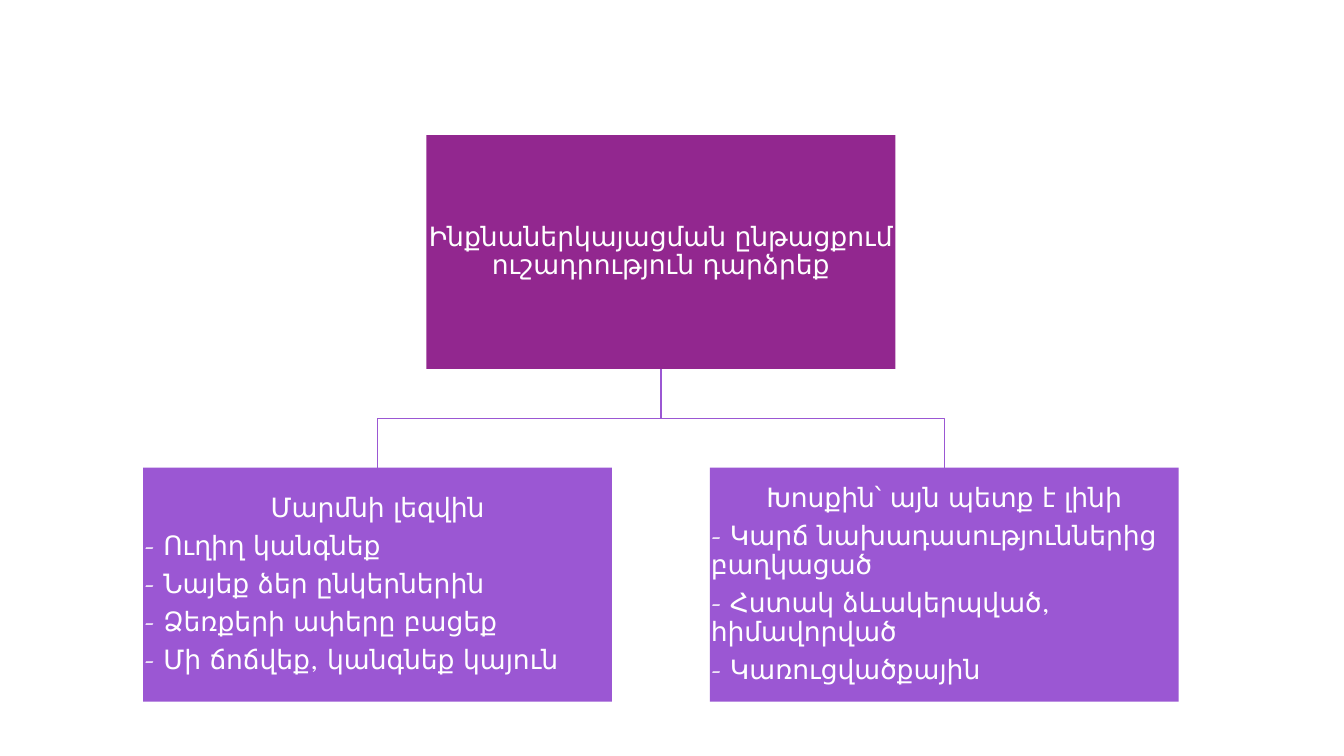
from lxml import etree
from pptx import Presentation
from pptx.dml.color import RGBColor
from pptx.enum.text import MSO_ANCHOR, MSO_AUTO_SIZE, PP_ALIGN
from pptx.oxml.ns import qn
from pptx.util import Inches, Pt

THEME = {
    "top": RGBColor.from_string("92278F"),
    "branch": RGBColor.from_string("9B57D3"),
    "text": RGBColor.from_string("FFFFFF"),
    "font": "TeX Gyre Bonum",
    "size": Pt(19),
    "line": Pt(1),
}
LEFT, TOP = 1.42, 1.34
COLUMN, ROW = 2.81, 3.3
BOX_WIDTH, BOX_HEIGHT = 4.65, 2.32

BOXES = [
    (1, 0, "top", ["Ինքնաներկայացման ընթացքում ուշադրություն դարձրեք"]),
    (0, 1, "branch", [
        "Մարմնի լեզվին",
        "- Ուղիղ կանգնեք",
        "- Նայեք ձեր ընկերներին",
        "- Ձեռքերի ափերը բացեք",
        "- Մի ճոճվեք, կանգնեք կայուն",
    ]),
    (2, 1, "branch", [
        "Խոսքին՝ այն պետք է լինի",
        "- Կարճ նախադասություններից բաղկացած",
        "- Հստակ ձևակերպված, հիմավորված",
        "- Կառուցվածքային",
    ]),
]
FRAME_FORMAT = {
    "word_wrap": True,
    "auto_size": MSO_AUTO_SIZE.NONE,
    "vertical_anchor": MSO_ANCHOR.MIDDLE,
    **dict.fromkeys(
        ["margin_left", "margin_top", "margin_right", "margin_bottom"], Inches(0.01)
    ),
}
PARAGRAPH_FORMAT = {
    "line_spacing": 0.9,
    "space_before": Pt(0),
    "space_after": Pt(6.65),
}
FONT_FORMAT = {"name": THEME["font"], "size": THEME["size"], "bold": False}


def apply_format(target, values):
    for name, value in values.items():
        setattr(target, name, value)


presentation = Presentation()
apply_format(presentation, {"slide_width": Inches(13.33), "slide_height": Inches(7.5)})
slide = presentation.slides.add_slide(presentation.slide_layouts.get_by_name("Two Content"))

for shape, (column, row, color, lines) in zip(list(slide.placeholders), BOXES):
    apply_format(shape, {
        "left": Inches(LEFT + column * COLUMN),
        "top": Inches(TOP + row * ROW),
        "width": Inches(BOX_WIDTH),
        "height": Inches(BOX_HEIGHT),
    })
    shape.fill.solid()
    shape.fill.fore_color.rgb = THEME[color]
    frame = shape.text_frame
    apply_format(frame, FRAME_FORMAT)
    frame.text = "\n".join(lines)
    for index, paragraph in enumerate(frame.paragraphs):
        properties = paragraph._p.get_or_add_pPr()
        properties.set("marL", "0")
        properties.set("indent", "0")
        etree.SubElement(properties, qn("a:buNone"))
        apply_format(paragraph, PARAGRAPH_FORMAT)
        paragraph.alignment = PP_ALIGN.LEFT if index else PP_ALIGN.CENTER
        for run in paragraph.runs:
            apply_format(run.font, FONT_FORMAT)
            run.font.color.rgb = THEME["text"]

center = LEFT + COLUMN + BOX_WIDTH / 2
trunk_top, branch_top = TOP + BOX_HEIGHT, TOP + ROW
middle = (trunk_top + branch_top) / 2
for side in (1, -1):
    end = center + side * COLUMN
    points = [(center, middle), (end, middle), (end, branch_top)]
    builder = slide.shapes.build_freeform(Inches(center), Inches(trunk_top))
    builder.add_line_segments([(Inches(x), Inches(y)) for x, y in points], close=False)
    branch = builder.convert_to_shape()
    branch.shadow.inherit = False
    branch.fill.background()
    branch.line.color.rgb = THEME["branch"]
    branch.line.width = THEME["line"]

presentation.save("out.pptx")
